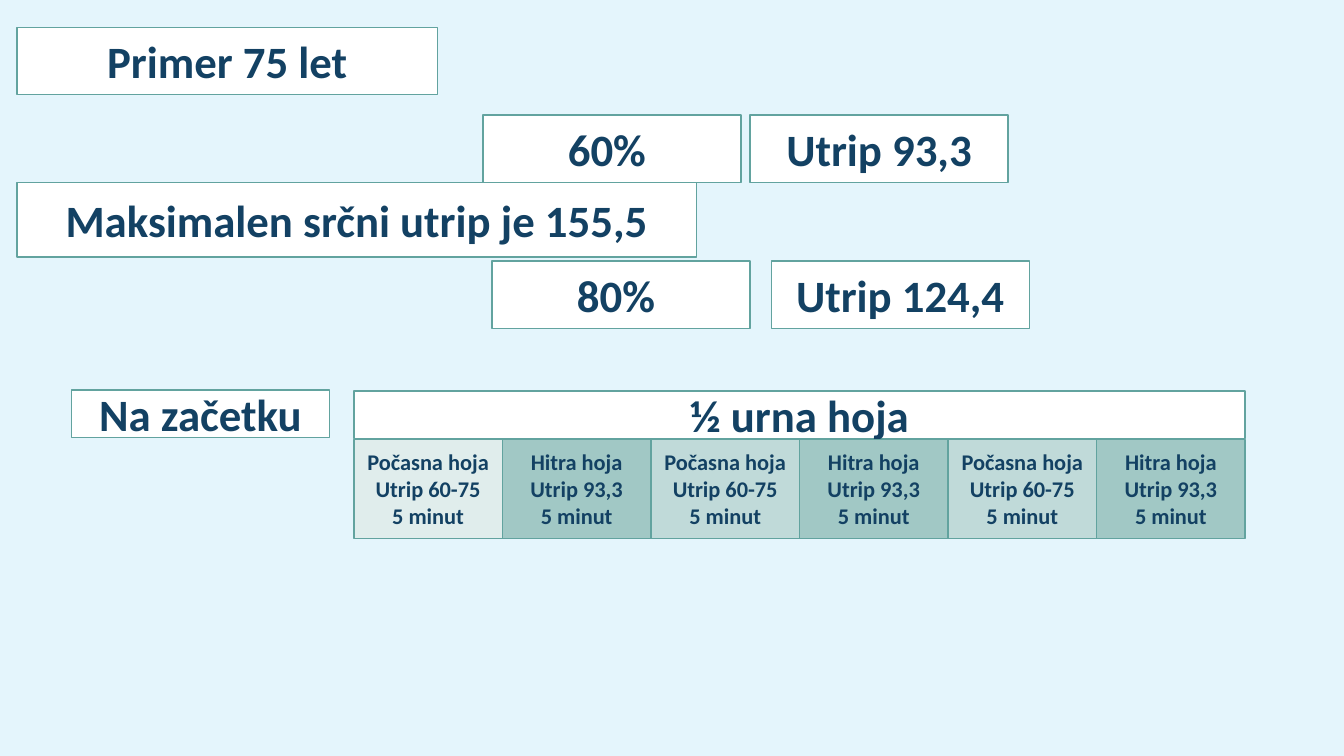
import pptx
import pptx.dml.color
import pptx.enum.shapes
import pptx.enum.text
import pptx.util

Inches = pptx.util.Inches
RGBColor = pptx.dml.color.RGBColor

SKY = RGBColor(0xE4, 0xF5, 0xFC)
NAVY = RGBColor(0x13, 0x41, 0x63)
TEAL = RGBColor(0x62, 0xA3, 0x9F)
WHITE = RGBColor(0xFF, 0xFF, 0xFF)
WARM_UP = RGBColor(0xE0, 0xED, 0xEC)
SLOW = RGBColor(0xC0, 0xDA, 0xD9)
FAST = RGBColor(0xA1, 0xC8, 0xC5)

EXAMPLE = ("Primer 75 let", (0.17, 0.27, 4.17, 0.67))
MAX_PULSE = ("Maksimalen srčni utrip je 155,5", (0.17, 1.81, 6.74, 0.74))
PULSE_ZONES = [
    ("60% ", "Utrip 93,3", 1.14, 4.79, 7.44),
    ("80% ", "Utrip 124,4", 2.59, 4.88, 7.65),
]
ZONE_SIZE = (2.56, 0.67)
START = ("Na začetku", (0.71, 3.87, 2.56, 0.47))
WALK = ("½ urna hoja", (3.51, 3.88, 8.84, 0.47))
SLOW_WALK = "Počasna hoja\nUtrip 60-75\n5 minut"
FAST_WALK = "Hitra hoja\nUtrip 93,3\n5 minut"
INTERVALS = [
    (SLOW_WALK, WARM_UP),
    (FAST_WALK, FAST),
    (SLOW_WALK, SLOW),
    (FAST_WALK, FAST),
    (SLOW_WALK, SLOW),
    (FAST_WALK, FAST),
]
INTERVAL_TOP, INTERVAL_HEIGHT = 4.36, 0.98

FRAME_FORMAT = {
    "word_wrap": True,
    "auto_size": pptx.enum.text.MSO_AUTO_SIZE.NONE,
    "vertical_anchor": pptx.enum.text.MSO_ANCHOR.MIDDLE,
}
FONT_FORMAT = {"name": "Calibri", "bold": True}


def apply_format(target, values):
    for name, value in values.items():
        setattr(target, name, value)


def format_box(box, text, fill, size):
    box.fill.solid()
    box.fill.fore_color.rgb = fill
    box.line.color.rgb = TEAL
    box.line.width = pptx.util.Pt(1)
    box.text_frame.text = text
    apply_format(box.text_frame, FRAME_FORMAT)
    for paragraph in box.text_frame.paragraphs:
        paragraph.alignment = pptx.enum.text.PP_ALIGN.CENTER
        for run in paragraph.runs:
            apply_format(run.font, FONT_FORMAT)
            run.font.size = pptx.util.Pt(size)
            run.font.color.rgb = NAVY


def add_box(slide, text, place, fill=WHITE, size=32):
    box = slide.shapes.add_shape(
        pptx.enum.shapes.MSO_SHAPE.RECTANGLE, *map(Inches, place))
    box.shadow.inherit = False
    format_box(box, text, fill, size)


def main():
    presentation = pptx.Presentation()
    presentation.slide_width = Inches(13.33)
    presentation.slide_height = Inches(7.5)
    slide = presentation.slides.add_slide(presentation.slide_layouts[5])
    slide.background.fill.solid()
    slide.background.fill.fore_color.rgb = SKY

    example, example_place = EXAMPLE
    title = slide.shapes.title
    apply_format(title, dict(zip(("left", "top", "width", "height"),
                                 map(Inches, example_place))))
    format_box(title, example, WHITE, 32)

    add_box(slide, *MAX_PULSE)
    for share, pulse, top, share_left, pulse_left in PULSE_ZONES:
        add_box(slide, share, (share_left, top, *ZONE_SIZE))
        add_box(slide, pulse, (pulse_left, top, *ZONE_SIZE))

    add_box(slide, *START)
    add_box(slide, *WALK)
    walk_left, _, walk_width, _ = WALK[1]
    interval_width = walk_width / len(INTERVALS)
    for index, (interval, fill) in enumerate(INTERVALS):
        left = walk_left + index * interval_width
        place = (left, INTERVAL_TOP, interval_width, INTERVAL_HEIGHT)
        add_box(slide, interval, place, fill, 16)

    presentation.save("out.pptx")


if __name__ == "__main__":
    main()
